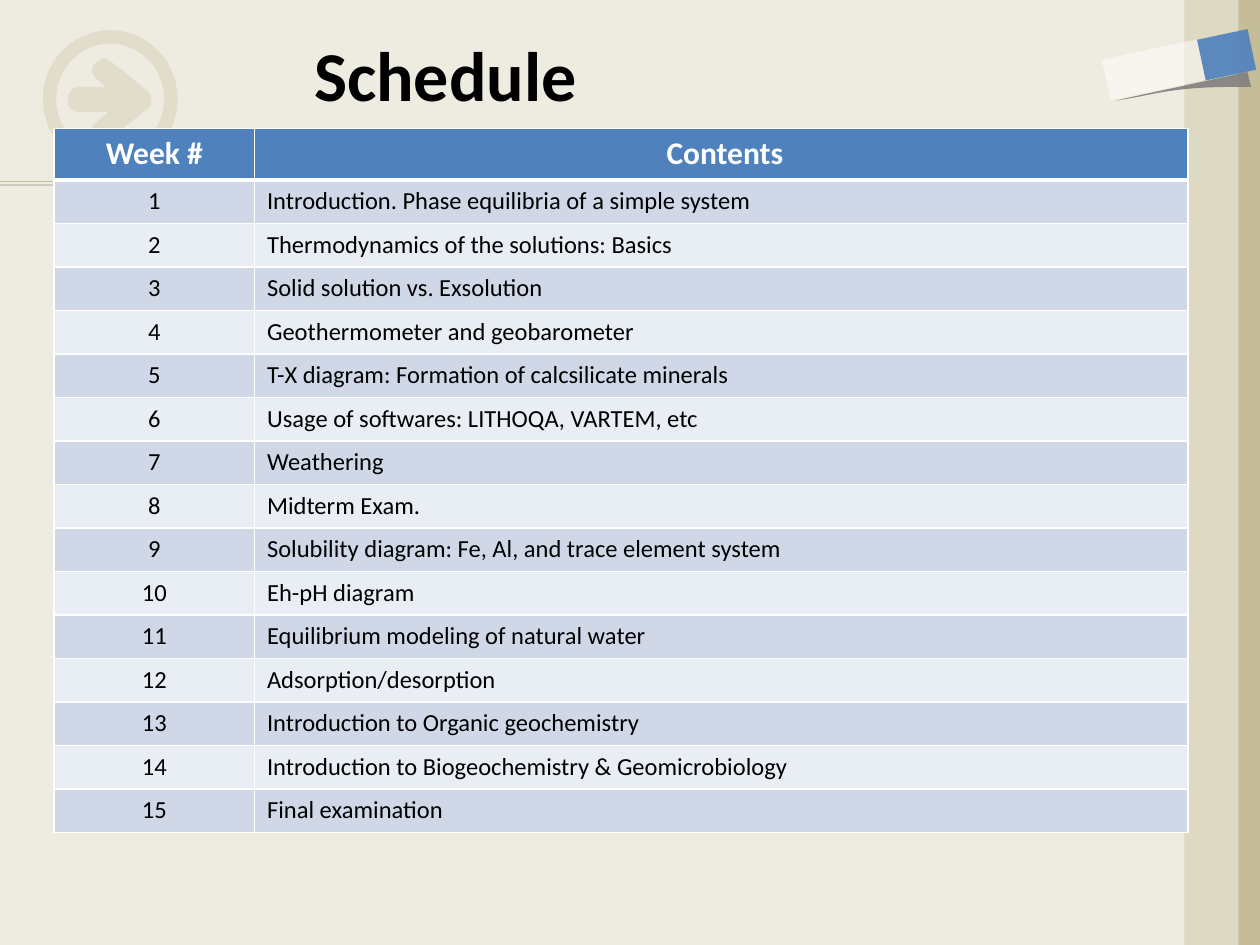
from dataclasses import dataclass

from lxml import etree
from pptx import Presentation
from pptx import util as u
from pptx.dml.color import RGBColor
from pptx.enum import shapes, text
from pptx.oxml import parse_xml
from pptx.oxml.ns import nsdecls, qn


@dataclass(frozen=True)
class Theme:
    background: str = "EEECE1"
    tan: str = "C4BD97"
    light_tan: str = "DDD9C3"
    blue: str = "4F81BD"
    white: str = "FFFFFF"
    black: str = "000000"
    grey: str = "808080"
    bands: tuple = ("D0D8E8", "E9EDF4")
    font: str = "Calibri"
    title_size: int = 40
    header_size: int = 18
    body_size: int = 14


theme = Theme()


def paint(shape, color, alpha=100):
    """Plain fill without outline or shadow, optionally see-through."""
    shape.shadow.inherit = False
    shape.line.fill.background()
    shape.fill.solid()
    shape.fill.fore_color.rgb = RGBColor.from_string(color)
    if alpha < 100:
        tint = shape.element.spPr.find(qn("a:solidFill"))[0]
        etree.SubElement(tint, qn("a:alpha")).set("val", str(alpha * 1000))


def outline(start, segments, steps=10):
    """Points along straight (2 numbers) and cubic (6 numbers) segments."""
    points = [start]
    for segment in segments:
        if len(segment) == 2:
            points.append(segment)
            continue
        controls = [points[-1], segment[:2], segment[2:4], segment[4:]]
        for step in range(1, steps + 1):
            t = step / steps
            weights = ((1 - t) ** 3, 3 * t * (1 - t) ** 2, 3 * t * t * (1 - t), t ** 3)
            points.append(tuple(sum(w * c[axis] for w, c in zip(weights, controls))
                                for axis in (0, 1)))
    return [(u.Inches(x), u.Inches(y)) for x, y in points]


prs = Presentation()
prs.slide_width, prs.slide_height = u.Inches(10), u.Inches(7.5)
slide = prs.slides.add_slide(prs.slide_layouts[6])
slide.background.fill.solid()
slide.background.fill.fore_color.rgb = RGBColor.from_string(theme.background)

# Rule under the title, with a hard shadow
rule = slide.shapes.add_connector(shapes.MSO_CONNECTOR.STRAIGHT, 0, u.Inches(1.44),
                                  u.Inches(9.38), u.Inches(1.44))
rule.line.color.rgb = RGBColor.from_string(theme.tan)
rule.line.width = u.Pt(0.75)
rule.element.spPr.append(parse_xml(
    f'<a:effectLst {nsdecls("a")}><a:outerShdw blurRad="0" dist="{u.Pt(2)}" dir="5400000">'
    f'<a:srgbClr val="{theme.black}"><a:alpha val="22000"/></a:srgbClr>'
    '</a:outerShdw></a:effectLst>'))

# Arrow inside a ring
arrow_points = outline((1.18, 0.73), [
    (1.12, 0.68, 0.92, 0.51, 0.85, 0.47), (0.81, 0.46, 0.79, 0.48, 0.76, 0.5),
    (0.73, 0.52, 0.72, 0.57, 0.75, 0.61), (0.84, 0.69), (0.61, 0.69),
    (0.55, 0.71, 0.54, 0.76, 0.54, 0.79), (0.53, 0.83, 0.56, 0.88, 0.61, 0.89),
    (0.86, 0.89), (0.74, 0.99), (0.73, 1.02, 0.73, 1.07, 0.75, 1.09),
    (0.77, 1.11, 0.8, 1.13, 0.84, 1.13), (1.01, 0.99, 1.19, 0.85, 1.19, 0.85),
    (1.21, 0.82, 1.2, 0.81, 1.2, 0.79), (1.2, 0.77, 1.2, 0.75, 1.18, 0.73)])
arrow_path = slide.shapes.build_freeform(*arrow_points[0])
arrow_path.add_line_segments(arrow_points[1:], close=True)
paint(arrow_path.convert_to_shape(), theme.tan, 30)

ring = slide.shapes.add_shape(shapes.MSO_SHAPE.DONUT, u.Inches(0.34), u.Inches(0.24),
                              u.Inches(1.07), u.Inches(1.09))
ring.adjustments[0] = 0.1
paint(ring, theme.tan, 30)

# Shadow below the tape
curl_points = outline((9.9, 0.57), [
    (9.93, 0.69), (9.28, 0.68, 9.15, 0.76, 8.85, 0.8), (9.2, 0.72, 9.55, 0.65, 9.9, 0.57)])
curl_path = slide.shapes.build_freeform(*curl_points[0])
curl_path.add_line_segments(curl_points[1:], close=True)
curl = curl_path.convert_to_shape()
paint(curl, theme.grey, 90)

# Right-hand bands, then the two tape pieces
for left, top, width, height, angle, color, alpha in (
        (9.41, 0, 0.59, 7.5, 0, theme.tan, 100),
        (9.4, 0, 0.43, 7.5, 0, theme.light_tan, 100),
        (9.57, 0.23, 0.33, 0.41, 78, theme.blue, 90),
        (8.99, 0.17, 0.33, 0.77, 78, theme.white, 50)):
    piece = slide.shapes.add_shape(shapes.MSO_SHAPE.RECTANGLE, u.Inches(left), u.Inches(top),
                                   u.Inches(width), u.Inches(height))
    piece.rotation = angle
    paint(piece, color, alpha)
    if angle == 0:  # bands lie beneath the tape shadow
        curl.element.addprevious(piece.element)

# Schedule table
topics = [
    "Introduction. Phase equilibria of a simple system",
    "Thermodynamics of the solutions: Basics",
    "Solid solution vs. Exsolution",
    "Geothermometer and geobarometer",
    "T-X diagram: Formation of calcsilicate minerals",
    "Usage of softwares: LITHOQA, VARTEM, etc",
    "Weathering",
    "Midterm Exam.",
    "Solubility diagram: Fe, Al, and trace element system",
    "Eh-pH diagram",
    "Equilibrium modeling of natural water",
    "Adsorption/desorption",
    "Introduction to Organic geochemistry",
    "Introduction to Biogeochemistry & Geomicrobiology",
    "Final examination",
]
rows = [("Week #", " Contents")] + [(str(week), topic) for week, topic in enumerate(topics, 1)]
header_height, table_height = 0.41, 5.59
schedule = slide.shapes.add_table(len(rows), 2, u.Inches(0.43), u.Inches(1.02),
                                  u.Inches(9), u.Inches(table_height)).table
for column, width in zip(schedule.columns, (1.59, 7.41)):
    column.width = u.Inches(width)

for r, row in enumerate(rows):
    header = r == 0
    schedule.rows[r].height = u.Inches(
        header_height if header else (table_height - header_height) / len(topics))
    for c, wording in enumerate(row):
        cell = schedule.cell(r, c)
        cell.fill.solid()
        cell.fill.fore_color.rgb = RGBColor.from_string(
            theme.blue if header else theme.bands[(r - 1) % 2])
        paragraph = cell.text_frame.paragraphs[0]
        paragraph.text = wording
        paragraph.alignment = (text.PP_ALIGN.CENTER if header or c == 0
                               else text.PP_ALIGN.LEFT)
        font = paragraph.runs[0].font
        font.name, font.bold = theme.font, header
        font.size = u.Pt(theme.header_size if header else theme.body_size)
        font.color.rgb = RGBColor.from_string(theme.white if header else theme.black)
        # White borders, heavier between header and body
        borders = {"L": 1, "R": 1, "T": 3 if r == 1 else 1, "B": 3 if header else 1}
        for position, (side, weight) in enumerate(borders.items()):
            cell._tc.get_or_add_tcPr().insert(position, parse_xml(
                f'<a:ln{side} {nsdecls("a")} w="{u.Pt(weight)}"><a:solidFill>'
                f'<a:srgbClr val="{theme.white}"/></a:solidFill></a:ln{side}>'))

# Title
title = slide.shapes.add_textbox(u.Inches(0.5), u.Inches(0.17), u.Inches(6.07), u.Inches(0.83))
title.text_frame.word_wrap = True
title.text_frame.vertical_anchor = text.MSO_ANCHOR.MIDDLE
heading = title.text_frame.paragraphs[0]
heading.text = "Schedule"
heading.alignment = text.PP_ALIGN.CENTER
font = heading.runs[0].font
font.name, font.size, font.bold = theme.font, u.Pt(theme.title_size), True
font.color.rgb = RGBColor.from_string(theme.black)

prs.save("out.pptx")
